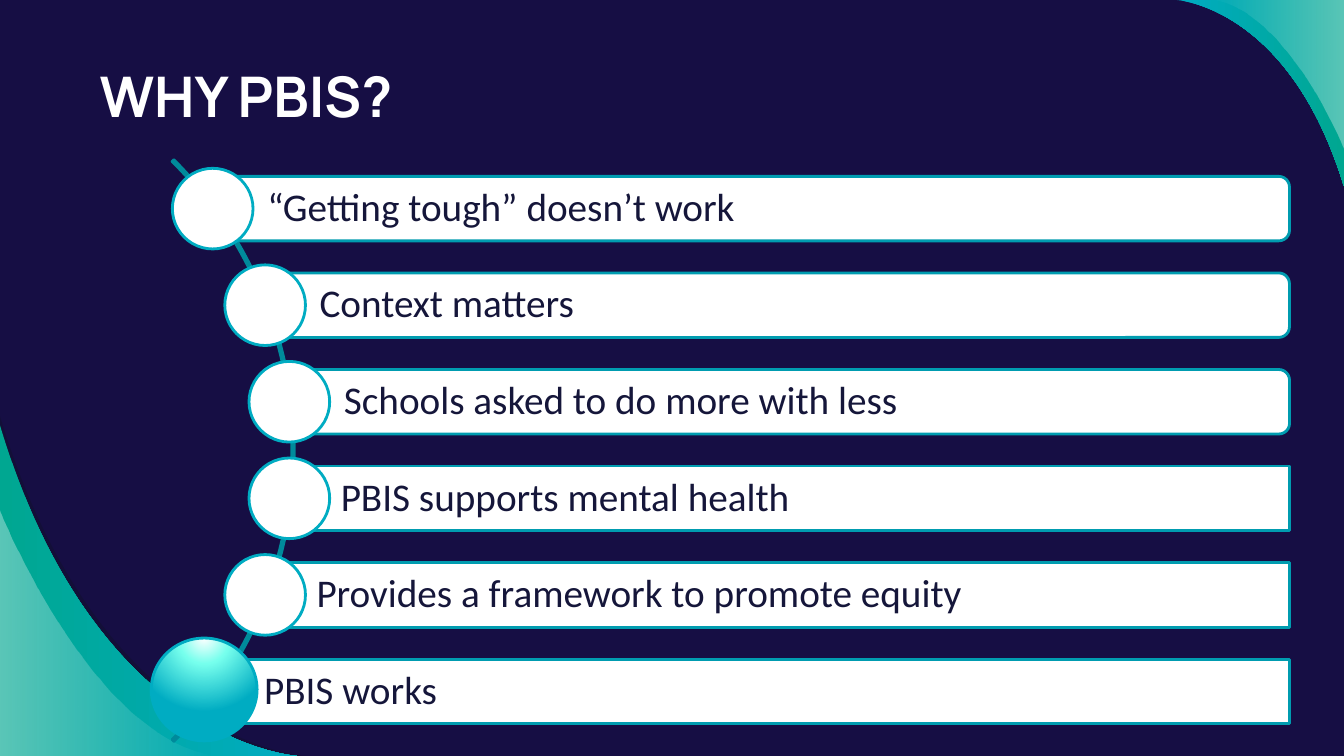
from dataclasses import dataclass
from typing import Any

import pptx
import pptx.dml.color
import pptx.enum.shapes
import pptx.enum.text
import pptx.oxml
import pptx.oxml.ns
import pptx.util
from lxml import etree

Inches = pptx.util.Inches
RGBColor = pptx.dml.color.RGBColor
Shapes = pptx.enum.shapes.MSO_SHAPE
qn = pptx.oxml.ns.qn

NAVY = RGBColor(0x16, 0x0E, 0x44)
SHADE = RGBColor(0x12, 0x10, 0x2F)
TEAL = RGBColor(0x00, 0xAC, 0xC2)
GREEN = RGBColor(0x00, 0xA7, 0x91)
MINT = RGBColor(0x76, 0xFF, 0xED)
WHITE = RGBColor(0xFF, 0xFF, 0xFF)
ARC_TEAL = RGBColor(0x00, 0x8A, 0x9B)
BAR_TEAL = RGBColor(0x00, 0x9C, 0xB0)
INK = RGBColor(0x15, 0x16, 0x3A)

Point = tuple[float, float]


@dataclass(frozen=True)
class Stop:
    position: int
    color: RGBColor
    opacity: int = 100


@dataclass(frozen=True)
class Swoosh:
    curve: tuple[Point, Point, Point, Point]
    corner: Point
    stops: tuple[Stop, ...]


@dataclass(frozen=True)
class Reason:
    wording: str
    left: float
    outline: Any


SHADE_ONLY = (Stop(0, SHADE, 54),)
TEAL_TO_GREEN = (Stop(0, TEAL), Stop(100, GREEN))
GREEN_TO_TEAL = (Stop(0, GREEN), Stop(100, TEAL))
FADE_IN = (Stop(0, WHITE, 0), Stop(100, WHITE, 36))
FADE_OUT = (Stop(0, WHITE, 36), Stop(100, WHITE, 0))
SPHERE_STOPS = (Stop(0, WHITE), Stop(35, MINT), Stop(100, TEAL))

BOTTOM_LEFT = (0, 7.5)
TOP_RIGHT = (13.33, 0)
SWOOSHES = (
    Swoosh(((0, 4.13), (0.98, 7.39), (3.03, 7.5), (3.03, 7.5)), BOTTOM_LEFT, SHADE_ONLY),
    Swoosh(((2.95, 7.5), (2.95, 7.5), (0.95, 7.39), (0, 4.22)), BOTTOM_LEFT, GREEN_TO_TEAL),
    Swoosh(((0, 5.06), (0, 5.06), (0.91, 7.35), (2.16, 7.5)), BOTTOM_LEFT, FADE_OUT),
    Swoosh(((11.67, 0), (11.67, 0), (12.79, 0.06), (13.33, 1.85)), TOP_RIGHT, TEAL_TO_GREEN),
    Swoosh(((13.33, 1.49), (13.33, 1.49), (12.77, 0.09), (12.01, 0)), TOP_RIGHT, FADE_IN),
)

REASONS = (
    Reason("“Getting tough” doesn’t work", 2.11, Shapes.ROUNDED_RECTANGLE),
    Reason("Context matters", 2.63, Shapes.ROUNDED_RECTANGLE),
    Reason("Schools asked to do more with less", 2.87, Shapes.ROUNDED_RECTANGLE),
    Reason("PBIS supports mental health", 2.87, Shapes.RECTANGLE),
    Reason("Provides a framework to promote equity", 2.63, Shapes.RECTANGLE),
    Reason("PBIS works", 2.11, Shapes.RECTANGLE),
)
FIRST_TOP, LAST_TOP = 1.75, 6.54
ROW_STEP = (LAST_TOP - FIRST_TOP) / (len(REASONS) - 1)
BAR_RIGHT, BAR_HEIGHT = 12.79, 0.64
DOT_SIZE = 0.8

TITLE_FRAME = {"margin_left": Inches(0.1), "margin_right": Inches(0.1),
               "margin_top": Inches(0.1), "margin_bottom": Inches(0.1),
               "word_wrap": True, "vertical_anchor": pptx.enum.text.MSO_ANCHOR.TOP}
TITLE_FONT = {"name": "Manrope", "size": pptx.util.Pt(40), "bold": True}
REASON_FRAME = {"margin_left": Inches(0.51), "margin_right": Inches(0.08),
                "margin_top": Inches(0.08), "margin_bottom": Inches(0.08),
                "word_wrap": True, "vertical_anchor": pptx.enum.text.MSO_ANCHOR.MIDDLE}
REASON_FONT = {"name": "Calibri", "size": pptx.util.Pt(28)}
REASON_PARAGRAPH = {"alignment": pptx.enum.text.PP_ALIGN.LEFT, "line_spacing": 0.9}


def apply(target: Any, formats: dict[str, Any]) -> None:
    for name, value in formats.items():
        setattr(target, name, value)


def write(shape: Any, wording: str, frame: dict[str, Any], font: dict[str, Any],
          color: RGBColor, layout: dict[str, Any]) -> None:
    apply(shape.text_frame, frame)
    paragraph = shape.text_frame.paragraphs[0]
    apply(paragraph, layout)
    run = paragraph.add_run()
    run.text = wording
    apply(run.font, font)
    run.font.color.rgb = color


def add_color(parent: Any, stop: Stop) -> None:
    color = etree.SubElement(parent, qn("a:srgbClr"), val=str(stop.color))
    if stop.opacity < 100:
        etree.SubElement(color, qn("a:alpha"), val=str(stop.opacity * 1000))


def fill_stops(shape: Any, stops: tuple[Stop, ...], radial: bool = False) -> None:
    if len(stops) == 1:
        shape.fill.solid()
        add_color(shape._element.spPr.find(qn("a:solidFill")), stops[0])
        return
    shape.fill.gradient()
    gradient = shape._element.spPr.find(qn("a:gradFill"))
    gradient.clear()
    stop_list = etree.SubElement(gradient, qn("a:gsLst"))
    for stop in stops:
        add_color(etree.SubElement(stop_list, qn("a:gs"), pos=str(stop.position * 1000)), stop)
    if radial:
        circle = etree.SubElement(gradient, qn("a:path"), {"path": "circle"})
        etree.SubElement(circle, qn("a:fillToRect"), l="50000", t="-80000", r="50000", b="180000")
    else:
        etree.SubElement(gradient, qn("a:lin"), ang="0", scaled="0")


def draw_swoosh(slide: Any, swoosh: Swoosh) -> None:
    start, *others = [(Inches(x), Inches(y)) for x, y in (*swoosh.curve, swoosh.corner)]
    builder = slide.shapes.build_freeform(*start)
    builder.add_line_segments(others, close=True)
    shape = builder.convert_to_shape()
    first, second, third = list(shape._element.iter(qn("a:lnTo")))[:3]
    bend = etree.Element(qn("a:cubicBezTo"))
    first.addprevious(bend)
    for segment in (first, second, third):
        bend.append(segment[0])
        segment.getparent().remove(segment)
    shape.shadow.inherit = False
    shape.line.fill.background()
    fill_stops(shape, swoosh.stops)


def draw_outlined(slide: Any, outline: Any, left: float, top: float, width: float,
                  height: float, line_color: RGBColor) -> Any:
    shape = slide.shapes.add_shape(outline, Inches(left), Inches(top), Inches(width), Inches(height))
    shape.shadow.inherit = False
    shape.fill.solid()
    shape.fill.fore_color.rgb = WHITE
    shape.line.color.rgb = line_color
    shape.line.width = pptx.util.Pt(2)
    return shape


def draw_reason(slide: Any, reason: Reason, top: float, with_dot: bool) -> None:
    bar = draw_outlined(slide, reason.outline, reason.left, top,
                        BAR_RIGHT - reason.left, BAR_HEIGHT, BAR_TEAL)
    write(bar, reason.wording, REASON_FRAME, REASON_FONT, INK, REASON_PARAGRAPH)
    if with_dot:
        draw_outlined(slide, Shapes.OVAL, reason.left - DOT_SIZE / 2,
                      top + (BAR_HEIGHT - DOT_SIZE) / 2, DOT_SIZE, DOT_SIZE, TEAL)


def main() -> None:
    deck = pptx.Presentation()
    deck.slide_width, deck.slide_height = Inches(13.33), Inches(7.5)
    slide = deck.slides.add_slide(deck.slide_layouts[6])
    slide.background.fill.solid()
    slide.background.fill.fore_color.rgb = NAVY

    for swoosh in SWOOSHES:
        draw_swoosh(slide, swoosh)

    title = slide.shapes.add_textbox(Inches(0.89), Inches(0.51), Inches(10.26), Inches(0.92))
    write(title, "WHY PBIS?", TITLE_FRAME, TITLE_FONT, WHITE, {})

    arc = draw_outlined(slide, Shapes.BLOCK_ARC, -5.24, 0.39, 8.16, 8.16, ARC_TEAL)
    arc.fill.background()
    for index, value in enumerate((189, 27, 0.003)):
        arc.adjustments[index] = value

    for row, reason in enumerate(REASONS):
        draw_reason(slide, reason, FIRST_TOP + row * ROW_STEP, row < len(REASONS) - 1)

    sphere = draw_outlined(slide, Shapes.OVAL, 1.5, 6.33, 1.05, 1.02, TEAL)
    fill_stops(sphere, SPHERE_STOPS, radial=True)

    deck.save("out.pptx")


if __name__ == "__main__":
    main()
